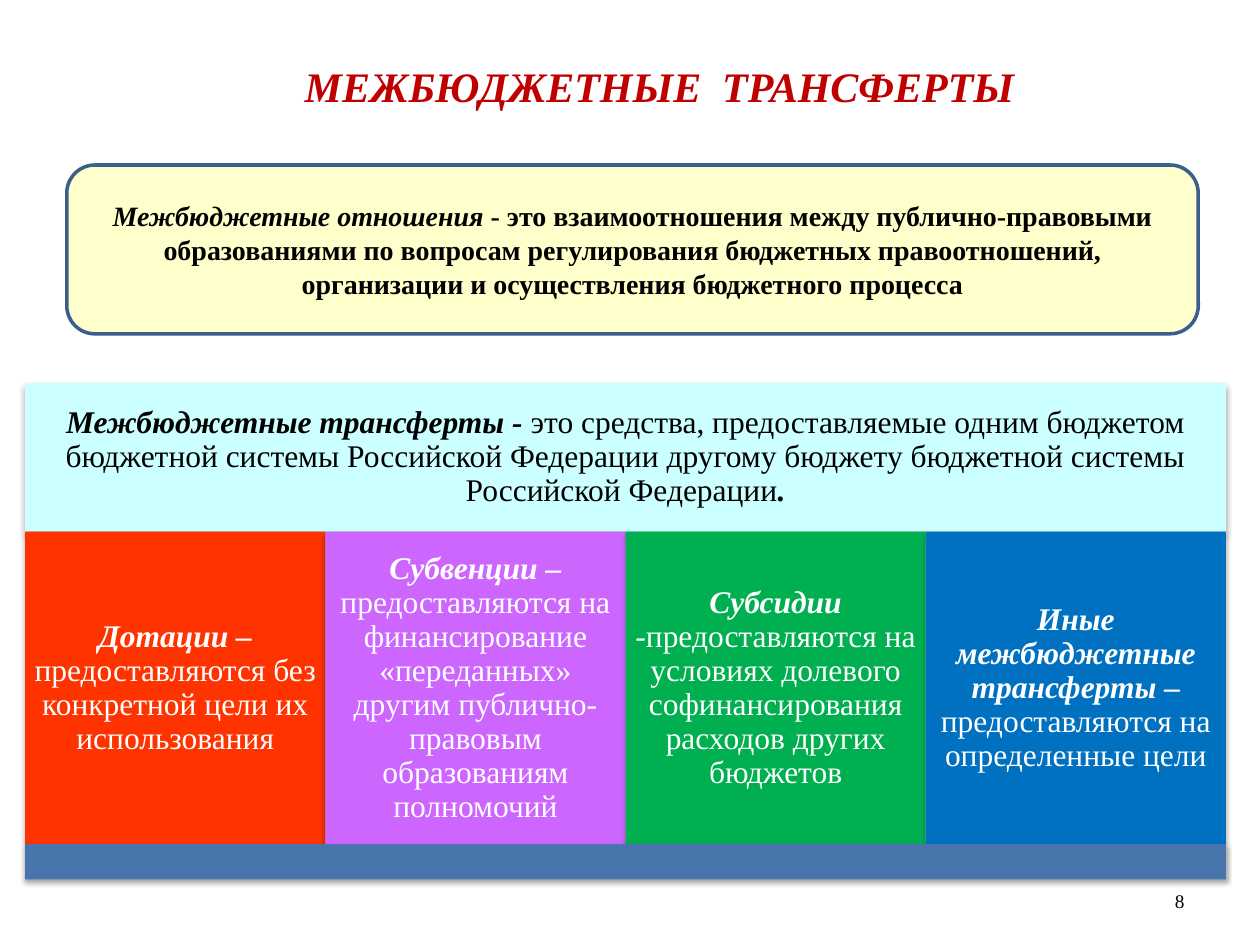
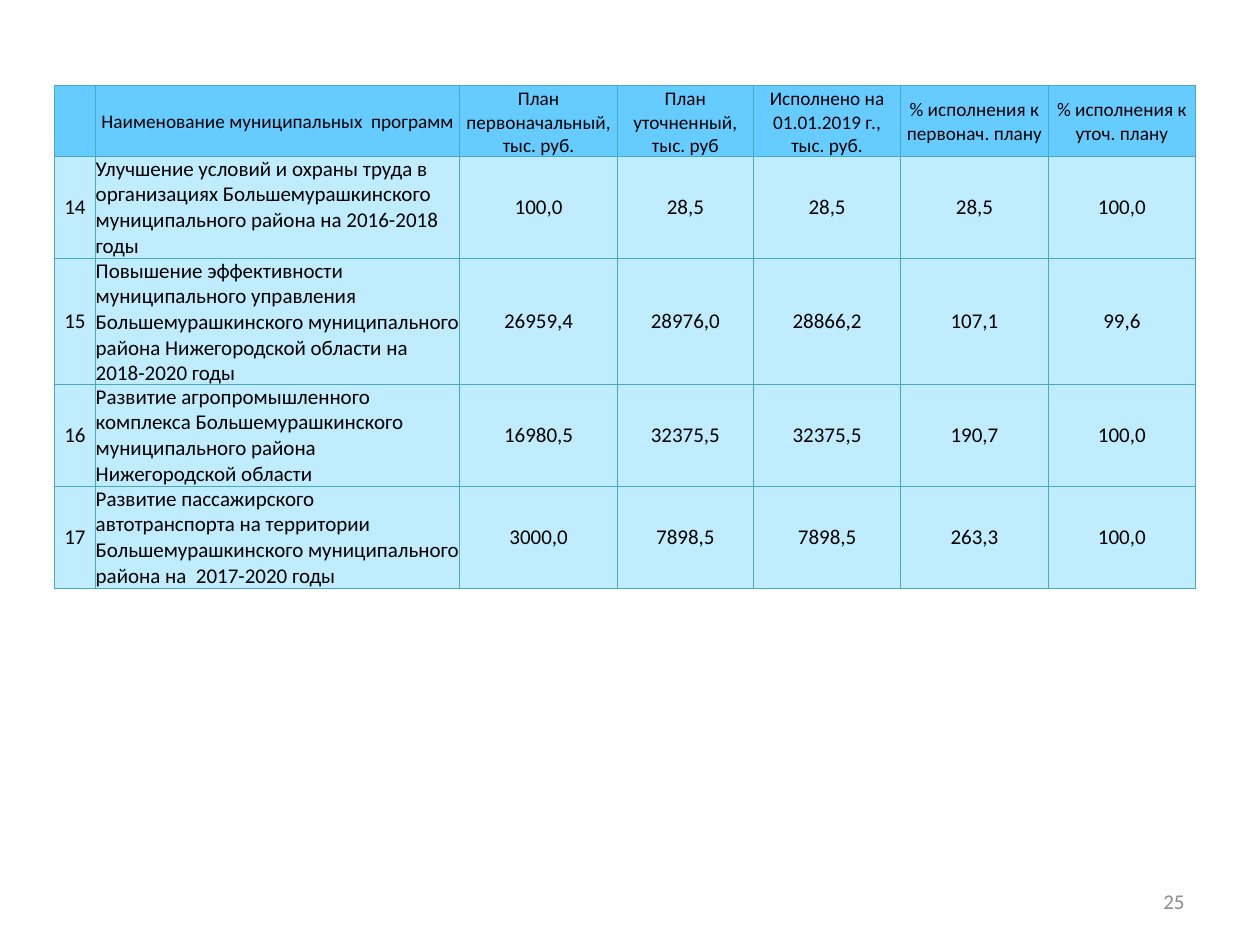
import pptx
import pptx.util
import pptx.dml.color
import pptx.enum.shapes
import pptx.enum.text
import pptx.oxml
import pptx.oxml.ns

Inches = pptx.util.Inches
Pt = pptx.util.Pt
RGB = pptx.dml.color.RGBColor
SHAPE = pptx.enum.shapes.MSO_SHAPE
ALIGN = pptx.enum.text.PP_ALIGN
MIDDLE = pptx.enum.text.MSO_ANCHOR.MIDDLE

# Shared colours and fonts
BLACK = RGB(0x00, 0x00, 0x00)
WHITE = RGB(0xFF, 0xFF, 0xFF)
GREY = RGB(0x8C, 0x8C, 0x8C)
CRIMSON = RGB(0xC0, 0x00, 0x00)
CREAM = RGB(0xFF, 0xFF, 0xCC)
NAVY = RGB(0x3A, 0x5F, 0x8C)
AQUA = RGB(0xCC, 0xFF, 0xFF)
RED = RGB(0xFF, 0x33, 0x00)
VIOLET = RGB(0xCC, 0x66, 0xFF)
GREEN = RGB(0x00, 0xB0, 0x50)
BLUE = RGB(0x00, 0x70, 0xC0)
STEEL = RGB(0x48, 0x75, 0xAC)
SKY = RGB(0x66, 0xCC, 0xFF)
PALE = RGB(0xBF, 0xEC, 0xFF)
TEAL = RGB(0x46, 0xAA, 0xC5)
SERIF, SANS = "Times New Roman", "Calibri"
NS = pptx.oxml.ns.nsdecls("a")
SHADOW = (f'<a:outerShdw {NS} blurRad="{Pt(3.1)}" dist="{Pt(1.8)}" dir="5400000" rotWithShape="0">'
          '<a:srgbClr val="000000"><a:alpha val="35000"/></a:srgbClr></a:outerShdw>')


def write(frame, runs, size, color=BLACK, font=SERIF, align=ALIGN.CENTER):
    """Fill the first paragraph with (text, bold, italic) runs."""
    para = frame.paragraphs[0]
    para.alignment = align
    for text, bold, slant in runs:
        run = para.add_run()
        run.text = text
        run.font.name, run.font.size = font, Pt(size)
        run.font.bold, run.font.italic = bold, slant
        run.font.color.rgb = color
    return para


def block(slide, left, top, width, height, fill, runs=(), color=BLACK):
    """Draw a shadowed rectangle of the transfer diagram."""
    rect = slide.shapes.add_shape(SHAPE.RECTANGLE, Inches(left), Inches(top),
                                  Inches(width), Inches(height))
    rect.fill.solid()
    rect.fill.fore_color.rgb = fill
    rect.line.fill.background()
    rect.shadow.inherit = False
    effects = rect._element.spPr.find(pptx.oxml.ns.qn("a:effectLst"))
    effects.append(pptx.oxml.parse_xml(SHADOW))
    frame = rect.text_frame
    frame.word_wrap, frame.vertical_anchor = True, MIDDLE
    frame.margin_left = frame.margin_right = Inches(0.07)
    frame.margin_top = frame.margin_bottom = Inches(0.07)
    if runs:
        write(frame, runs, 18, color).line_spacing = 0.9


deck = pptx.Presentation()
deck.slide_width, deck.slide_height = Inches(10), Inches(7.5)

# Both slides with their page numbers
slides = []
for number, size, color, font in [("8", 11, BLACK, SERIF), ("25", 12, GREY, SANS)]:
    slide = deck.slides.add_slide(deck.slide_layouts[6])
    frame = slide.shapes.add_textbox(Inches(7.17), Inches(6.95), Inches(2.33), Inches(0.4)).text_frame
    frame.word_wrap, frame.vertical_anchor = True, MIDDLE
    write(frame, [(number, False, False)], size, color, font, ALIGN.RIGHT)
    slides.append(slide)
first, second = slides

# Slide 1: transfer diagram
LEFT, TOP, WIDE = 0.2, 3.04, 9.53
HEAD, TALL, FOOT = 1.18, 2.48, 0.28
block(first, LEFT, TOP, WIDE, HEAD, AQUA, [
    ("Межбюджетные трансферты - ", True, True),
    ("это средства, предоставляемые одним бюджетом бюджетной системы Российской Федерации "
     "другому бюджету бюджетной системы Российской Федерации", False, False),
    (".", True, True)])
kinds = [
    (RED, "Дотации – ", "предоставляются без конкретной цели их использования"),
    (VIOLET, "Субвенции – ", "предоставляются на финансирование «переданных» другим "
     "публично-правовым образованиям полномочий"),
    (GREEN, "Субсидии ", "-предоставляются на условиях долевого софинансирования "
     "расходов других бюджетов"),
    (BLUE, "Иные межбюджетные трансферты – ", "предоставляются на определенные цели"),
]
step = WIDE / len(kinds)
for col, (fill, name, text) in enumerate(kinds):
    block(first, LEFT + col * step, TOP + HEAD, step, TALL, fill,
          [(name, True, True), (text, False, False)], WHITE)
block(first, LEFT, TOP + HEAD + TALL, WIDE, FOOT, STEEL)

# Slide 1: definition panel
panel = first.shapes.add_shape(SHAPE.FLOWCHART_ALTERNATE_PROCESS, Inches(0.53), Inches(1.31),
                               Inches(8.98), Inches(1.34))
panel.fill.solid()
panel.fill.fore_color.rgb = CREAM
panel.line.color.rgb, panel.line.width = NAVY, Pt(2)
panel.shadow.inherit = False
panel.text_frame.word_wrap, panel.text_frame.vertical_anchor = True, MIDDLE
write(panel.text_frame, [
    ("Межбюджетные отношения ", True, True),
    ("- это взаимоотношения между публично-правовыми образованиями по вопросам регулирования "
     "бюджетных правоотношений, организации и осуществления бюджетного процесса", True, False)], 16)

# Slide 1: title
title = first.shapes.add_textbox(Inches(2.32), Inches(0.43), Inches(5.89), Inches(0.5)).text_frame
title.word_wrap = False
title.auto_size = pptx.enum.text.MSO_AUTO_SIZE.SHAPE_TO_FIT_TEXT
write(title, [("МЕЖБЮДЖЕТНЫЕ  ТРАНСФЕРТЫ", True, True)], 24, CRIMSON, align=ALIGN.LEFT)

# Slide 2: programme table
rows = [
    ["", "Наименование муниципальных  программ", "План первоначальный, тыс. руб.",
     "План уточненный, тыс. руб", "Исполнено на 01.01.2019 г., тыс. руб.",
     "% исполнения к первонач. плану", "% исполнения к уточ. плану"],
    ["14", "Улучшение условий и охраны труда в организациях Большемурашкинского "
     "муниципального района на 2016-2018 годы", "100,0", "28,5", "28,5", "28,5", "100,0"],
    ["15", "Повышение эффективности муниципального управления Большемурашкинского "
     "муниципального района Нижегородской области на 2018-2020 годы",
     "26959,4", "28976,0", "28866,2", "107,1", "99,6"],
    ["16", "Развитие агропромышленного комплекса Большемурашкинского муниципального "
     "района  Нижегородской области", "16980,5", "32375,5", "32375,5", "190,7", "100,0"],
    ["17", "Развитие пассажирского  автотранспорта на территории Большемурашкинского "
     "муниципального района на  2017-2020 годы", "3000,0", "7898,5", "7898,5", "263,3", "100,0"],
]
widths = [0.33, 2.89, 1.25, 1.08, 1.17, 1.17, 1.17]
heights = [0.56, 0.81, 1, 0.81, 0.81]
grid = second.shapes.add_table(len(rows), len(widths), Inches(0.43), Inches(0.68),
                               Inches(sum(widths)), Inches(sum(heights))).table
grid.first_row = grid.horz_banding = False
for col, width in enumerate(widths):
    grid.columns[col].width = Inches(width)
for row, (height, texts) in enumerate(zip(heights, rows)):
    grid.rows[row].height = Inches(height)
    top = row == 0
    for col, text in enumerate(texts):
        cell = grid.cell(row, col)
        cell.vertical_anchor = MIDDLE
        cell.margin_left = cell.margin_right = cell.margin_top = Inches(0.01 if top else 0)
        cell.margin_bottom = 0
        cell.fill.solid()
        cell.fill.fore_color.rgb = SKY if top else PALE
        for spot, side in enumerate("LRTB"):
            edge = (f'<a:ln{side} {NS} w="{Pt(0.75)}"><a:solidFill><a:srgbClr val="{TEAL}"/>'
                    f'</a:solidFill></a:ln{side}>')
            cell._tc.get_or_add_tcPr().insert(spot, pptx.oxml.parse_xml(edge))
        if text:
            align = ALIGN.LEFT if col == 1 and not top else ALIGN.CENTER
            write(cell.text_frame, [(text, False, False)], 11 if top else 12, BLACK, SANS, align)

deck.save("out.pptx")
